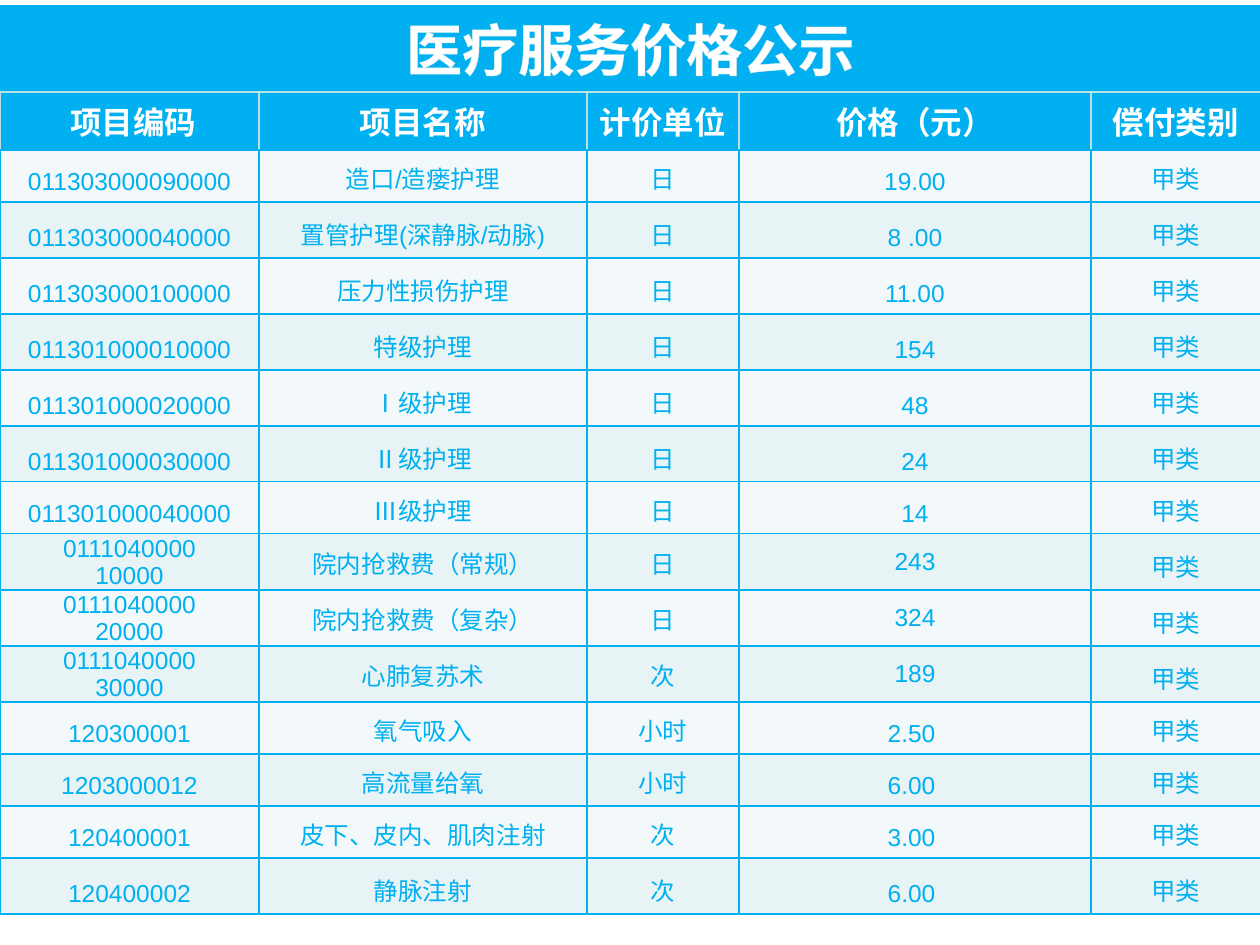
from dataclasses import dataclass
from itertools import groupby

from lxml.etree import SubElement
from pptx import Presentation
from pptx.dml.color import RGBColor
from pptx.enum.text import MSO_ANCHOR, PP_ALIGN
from pptx.oxml.ns import qn
from pptx.util import Pt

SCALE = 914400 / 126


def emu(px):
    return round(px * SCALE)


@dataclass(frozen=True)
class Theme:
    main: str = "00B0F0"
    white: str = "FFFFFF"
    rule: str = "BBE0E3"
    glow: str = "D9EDEE"
    bands: tuple = ("F3F9FA", "E7F3F4")
    latin: str = "Arial"
    asian: str = "Noto Sans CJK SC"
    title: int = 32
    head: int = 18
    body: int = 14


TITLE = "医疗服务价格公示"
HEADS = (" 项目编码", "项目名称", "计价单位", "价格（元）", "偿付类别")
CLASS = "甲类"
ITEMS = (
    ("011303000090000", "造口/造瘘护理", "日", "19.00"),
    ("011303000040000", "置管护理(深静脉/动脉)", "日", "8 .00"),
    ("011303000100000", "压力性损伤护理", "日", "11.00"),
    ("011301000010000", "特级护理", "日", "154"),
    ("011301000020000", "Ⅰ级护理", "日", "48"),
    ("011301000030000", "Ⅱ级护理", "日", "24"),
    ("011301000040000", "Ⅲ级护理", "日", "14"),
    ("0111040000\n10000", "院内抢救费（常规）", "日", "243"),
    ("0111040000\n20000", "院内抢救费（复杂）", "日", "324"),
    ("0111040000\n30000", "心肺复苏术", "次", "189"),
    ("120300001", "氧气吸入", "小时", "2.50 "),
    ("1203000012", "高流量给氧", "小时", "6.00 "),
    ("120400001", "皮下、皮内、肌肉注射", "次", "3.00 "),
    ("120400002", "静脉注射", "次", "6.00 "),
)
COLS = (259, 328, 152, 352, 170)
ROWS = (86, 58, 52, *[56] * 5, 52, *[56] * 3, 52, 52, 52, 56)

# Cell insets in px: left, top, right, bottom
WIDE = (13, 6, 13, 6)
LOW = (1, 1, 1, 6)
MID = (1, 1, 1, 0)


class Sheet:
    def __init__(self, slide, theme):
        self.slide = slide
        self.theme = theme

    def table(self, left, top, cols, rows):
        frame = self.slide.shapes.add_table(
            len(rows), len(cols), emu(left), emu(top), emu(sum(cols)), emu(sum(rows)))
        grid = frame.table
        for col, width in zip(grid.columns, cols):
            col.width = emu(width)
        for row, height in zip(grid.rows, rows):
            row.height = emu(height)
        return grid

    def cell(self, cell, fill, pale=""):
        """Fill a cell and rule its sides; those named in pale are light."""
        props = cell._tc.get_or_add_tcPr()
        for side in "LRTB":
            line = SubElement(props, qn(f"a:ln{side}"), w=str(Pt(1)))
            paint = SubElement(line, qn("a:solidFill"))
            tint = self.theme.rule if side in pale else self.theme.main
            SubElement(paint, qn("a:srgbClr"), val=tint)
        cell.fill.solid()
        cell.fill.fore_color.rgb = RGBColor.from_string(fill)

    def text(self, cell, words, size, color, bold=False,
             inset=WIDE, anchor=MSO_ANCHOR.TOP):
        (cell.margin_left, cell.margin_top,
         cell.margin_right, cell.margin_bottom) = map(emu, inset)
        cell.vertical_anchor = anchor
        para = cell.text_frame.paragraphs[0]
        para.alignment = PP_ALIGN.CENTER
        for num, line in enumerate(words.split("\n")):
            if num:
                para.add_line_break()
            # Roman numerals take the Asian face
            for roman, part in groupby(line, lambda char: char in "ⅠⅡⅢ"):
                face = self.theme.asian if roman else self.theme.latin
                self.run(para, "".join(part), size, color, bold, face)
        return para

    def run(self, para, words, size, color, bold, face):
        run = para.add_run()
        run.text = words
        font = run.font
        font.size, font.bold, font.name = Pt(size), bold, face
        font.color.rgb = RGBColor.from_string(color)
        SubElement(run._r.get_or_add_rPr(), qn("a:ea"), typeface=self.theme.asian)

    def edge(self, para, color, width):
        """Outline the letters of a paragraph."""
        for run in para.runs:
            props = run._r.get_or_add_rPr()
            line = SubElement(props, qn("a:ln"), w=str(Pt(width)))
            paint = SubElement(line, qn("a:solidFill"))
            SubElement(paint, qn("a:srgbClr"), val=color)
            props.insert(0, line)


def main():
    deck = Presentation()
    deck.slide_width, deck.slide_height = emu(1260), emu(945)
    theme = Theme()
    sheet = Sheet(deck.slides.add_slide(deck.slide_layouts[6]), theme)
    grid = sheet.table(0, 6, COLS, ROWS)

    # Title row
    for col in range(len(COLS)):
        sheet.cell(grid.cell(0, col), theme.main, "B")
    banner = grid.cell(0, 0)
    banner.merge(grid.cell(0, len(COLS) - 1))
    para = sheet.text(banner, TITLE, theme.title, theme.white, True,
                      anchor=MSO_ANCHOR.MIDDLE)
    para.line_spacing = 0.9
    sheet.edge(para, theme.glow, 0.8)

    # Column heads
    for col, words in enumerate(HEADS):
        cell = grid.cell(1, col)
        sheet.cell(cell, theme.main, "LTR")
        sheet.text(cell, words, theme.head, theme.white, True)

    # Price rows: two-line codes centre their row, save for the class
    for row, item in enumerate(ITEMS):
        for col, words in enumerate((*item, CLASS)):
            cell = grid.cell(row + 2, col)
            sheet.cell(cell, theme.bands[row % 2])
            mid = "\n" in item[0] and col < len(item)
            sheet.text(cell, words, theme.body, theme.main,
                       inset=MID if mid else LOW,
                       anchor=MSO_ANCHOR.MIDDLE if mid else MSO_ANCHOR.BOTTOM)

    deck.save("out.pptx")


if __name__ == "__main__":
    main()
